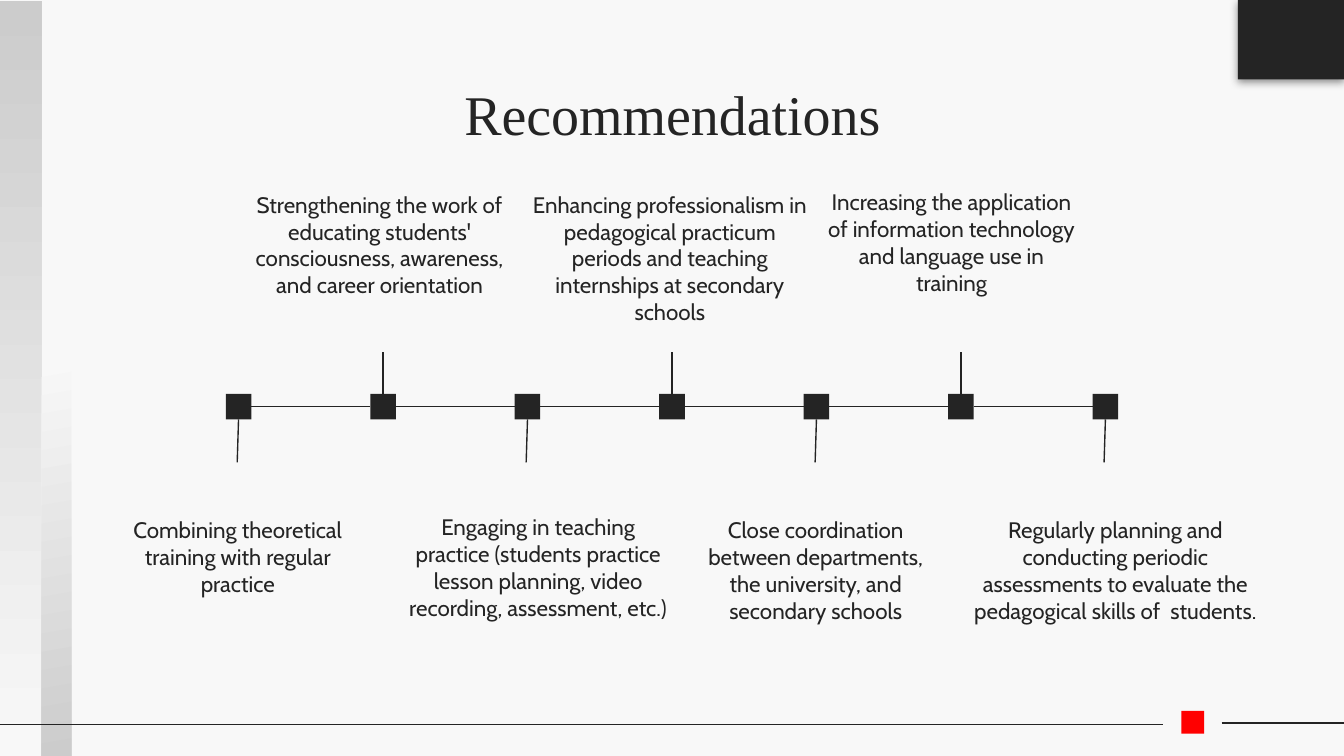
from lxml import etree
from pptx import Presentation
from pptx import util as u
from pptx.dml.color import RGBColor
from pptx.enum import shapes, text
from pptx.oxml import ns

INK = RGBColor(0x24, 0x24, 0x24)
PAPER = RGBColor(0xF8, 0xF8, 0xF8)
GREY = RGBColor(0xCC, 0xCC, 0xCC)
RED = RGBColor(0xFF, 0, 0)
TOP, LEFT, BOTTOM, RIGHT = range(4)


class Deck:
    title_font = "Times New Roman"
    body_font = "Cabin"
    inset = u.Inches(0.1)

    def __init__(self, width, height):
        self.deck = Presentation()
        self.deck.slide_width = u.Inches(width)
        self.deck.slide_height = u.Inches(height)
        self.slide = self.deck.slides.add_slide(self.deck.slide_layouts[6])
        background = self.slide.background.fill
        background.solid()
        background.fore_color.rgb = PAPER

    def block(self, left, top, width, height, color=INK):
        block = self.slide.shapes.add_shape(
            shapes.MSO_SHAPE.RECTANGLE, *map(u.Inches, (left, top, width, height)))
        block.shadow.inherit = False
        block.fill.solid()
        block.fill.fore_color.rgb = color
        block.line.fill.background()
        return block

    def band(self, left, width, angle, start):
        band = self.block(left, 0.01, width, 5.62)
        band.rotation = 180
        band.fill.gradient()
        band.fill.gradient_angle = angle
        for stop, position, color in zip(band.fill.gradient_stops, (start, 1), (PAPER, GREY)):
            stop.position = position
            stop.color.rgb = color

    def drop_shadow(self, block):
        effects = block._element.spPr.find(ns.qn("a:effectLst"))
        shadow = etree.SubElement(
            effects, ns.qn("a:outerShdw"), blurRad=str(u.Pt(4.5)),
            dist=str(u.Pt(1.5)), dir="5400000", algn="bl", rotWithShape="0")
        tint = etree.SubElement(shadow, ns.qn("a:srgbClr"), val=str(INK))
        etree.SubElement(tint, ns.qn("a:alpha"), val="50000")

    def line(self, x1, y1, x2, y2):
        line = self.slide.shapes.add_connector(
            shapes.MSO_CONNECTOR.STRAIGHT, *map(u.Inches, (x1, y1, x2, y2)))
        line.line.color.rgb = INK
        line.line.width = u.Pt(0.75)
        etree.SubElement(line._element.spPr, ns.qn("a:effectLst"))
        return line

    def label(self, left, top, width, height, words, font=body_font, size=12):
        label = self.slide.shapes.add_textbox(*map(u.Inches, (left, top, width, height)))
        frame = label.text_frame
        frame.word_wrap = True
        frame.vertical_anchor = text.MSO_ANCHOR.TOP
        frame.margin_left = frame.margin_right = self.inset
        frame.margin_top = frame.margin_bottom = self.inset
        paragraph = frame.paragraphs[0]
        paragraph.text = words
        paragraph.alignment = text.PP_ALIGN.CENTER
        paragraph.font.name = font
        paragraph.font.size = u.Pt(size)
        paragraph.font.color.rgb = INK


def main():
    deck = Deck(10, 10 * 9 / 16)
    deck.band(0, 0.31, 270, 0)
    deck.band(0.31, 0.22, 100, 0.47)
    deck.drop_shadow(deck.block(9.21, 0, 0.79, 0.59))
    deck.line(-0.12, 5.39, 8.65, 5.39)
    deck.block(8.79, 5.29, 0.17, 0.17, RED)
    deck.line(9.09, 5.38, 10.01, 5.38)
    deck.label(0.79, 0.49, 8.43, 0.63, "Recommendations", deck.title_font, 30)

    recommendations = [
        (0.78, 3.74, 1.98, 0.35, "Combining theoretical training with regular practice"),
        (1.75, 1.32, 2.15, 0.63, "Strengthening the work of educating students' "
         "consciousness, awareness, and career orientation"),
        (2.93, 3.72, 2.15, 0.37, "Engaging in teaching practice (students practice "
         "lesson planning, video recording, assessment, etc.)"),
        (3.82, 1.32, 2.33, 0.63, "Enhancing professionalism in pedagogical practicum "
         "periods and teaching internships at secondary schools"),
        (5.08, 3.74, 1.98, 0.35, "Close coordination between departments, "
         "the university, and secondary schools"),
        (6.02, 1.3, 2.12, 0.34, "Increasing the application of information technology "
         "and language use in training"),
        (7.13, 3.74, 2.34, 0.35, "Regularly planning and conducting periodic assessments "
         "to evaluate the pedagogical skills of  students."),
    ]
    pitch, side, top = 1.07, 0.19, 2.93
    pitch = (8.13 - 1.68) / (len(recommendations) - 1)
    middle, bottom = top + side / 2, top + side
    previous = None
    for index, recommendation in enumerate(recommendations):
        left = 1.68 + index * pitch
        center = left + side / 2
        milestone = deck.block(left, top, side, side)
        if index % 2:
            stem = deck.line(center, top, center, 2.62)
            stem.begin_connect(milestone, TOP)
        else:
            stem = deck.line(center, bottom, center - 0.01, 3.44)
            stem.begin_connect(milestone, BOTTOM)
        if previous:
            link = deck.line(left - pitch + side, middle, left, middle)
            link.begin_connect(previous, RIGHT)
            link.end_connect(milestone, LEFT)
        deck.label(*recommendation)
        previous = milestone

    deck.deck.save("out.pptx")


if __name__ == "__main__":
    main()
